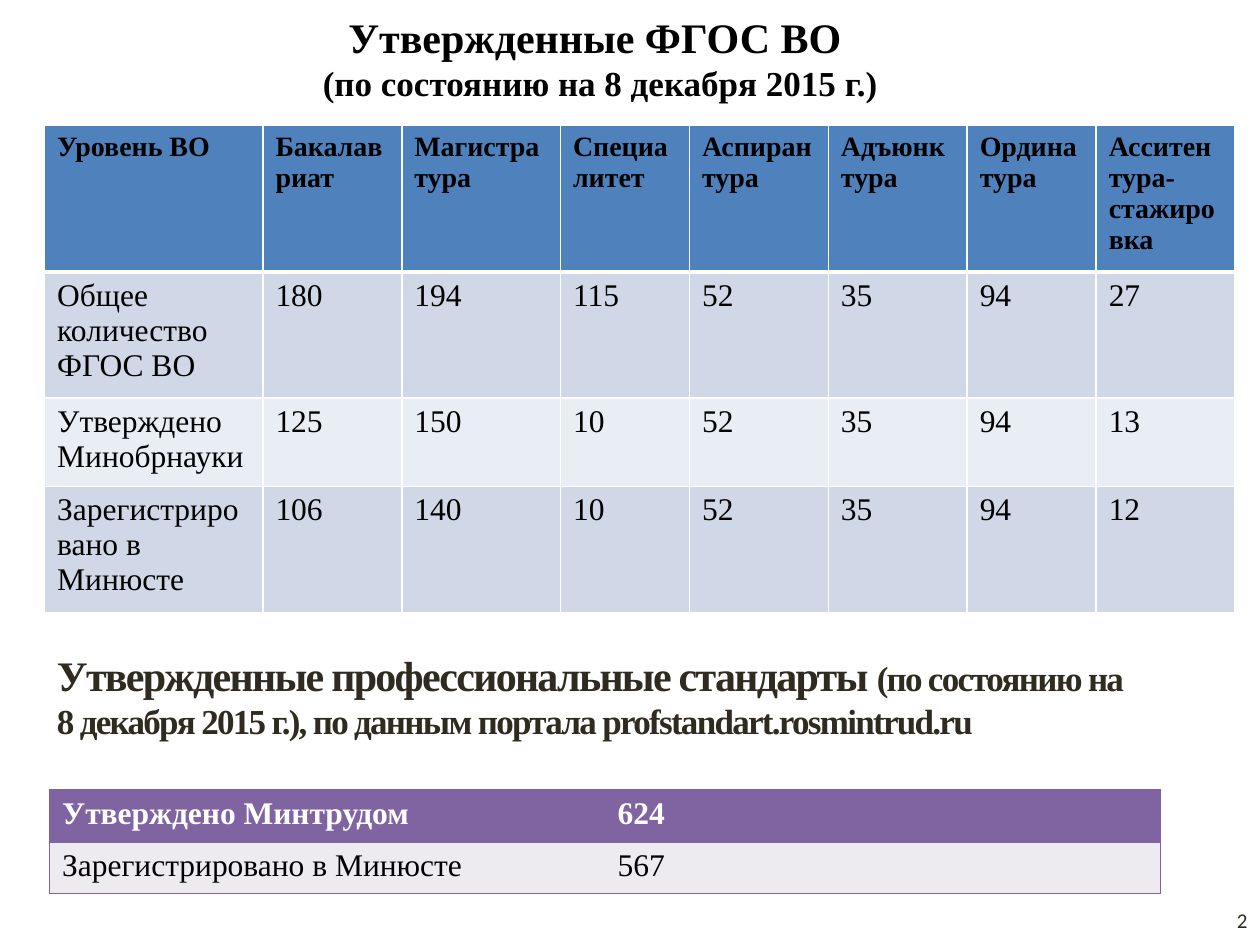
import pptx
import pptx.util
import pptx.dml.color
import pptx.enum.text
import pptx.oxml
import pptx.oxml.ns
from dataclasses import dataclass

Cm = pptx.util.Cm
Pt = pptx.util.Pt
ALIGN = pptx.enum.text.PP_ALIGN
MIDDLE = pptx.enum.text.MSO_ANCHOR.MIDDLE


@dataclass(frozen=True)
class Theme:
    serif: str = "Times New Roman"
    sans: str = "Calibri"
    black: str = "000000"
    white: str = "FFFFFF"
    ink: str = "2F2B20"
    blue: str = "4F81BD"
    blue_bands: tuple = ("D0D8E8", "E9EDF4")
    purple: str = "8064A2"
    purple_bands: tuple = ("EDEAF0",)
    heading: int = 24
    subheading: int = 20
    cell: int = 18
    column_head: int = 16
    page: int = 12


THEME = Theme()

TITLE = ("Утвержденные ФГОС ВО ", "(по состоянию на 8 декабря 2015 г.)")
STANDARDS_HEADING = (
    "Утвержденные профессиональные стандарты ",
    "(по состоянию на 8 декабря 2015 г.), по данным портала profstandart.rosmintrud.ru",
)
PAGE_NUMBER = "2"
LEVELS = [
    ("Уровень ВО", "Бакалавриат", "Магистратура", "Специалитет", "Аспирантура",
     "Адъюнктура", "Ординатура", "Асситентура-стажировка"),
    ("Общее количество ФГОС ВО", 180, 194, 115, 52, 35, 94, 27),
    ("Утверждено Минобрнауки", 125, 150, 10, 52, 35, 94, 13),
    ("Зарегистрировано в Минюсте", 106, 140, 10, 52, 35, 94, 12),
]
LEVEL_WIDTHS = (4.4, 2.8, 3.2, 2.6, 2.8, 2.8, 2.6, 2.8)
STANDARDS = [("Утверждено Минтрудом", 624), ("Зарегистрировано в Минюсте", 567)]
STANDARD_WIDTHS = (11.2, 11.2)


def rgb(value):
    return pptx.dml.color.RGBColor.from_string(value)


def style(font, size, color, bold=False, name=THEME.serif):
    font.name, font.size, font.bold = name, Pt(size), bold
    font.color.rgb = rgb(color)


def place(shape, left, top, width, height):
    shape.left, shape.top, shape.width, shape.height = map(Cm, (left, top, width, height))


def set_borders(cell, borders):
    properties = cell._tc.get_or_add_tcPr()
    for index, side in enumerate("LRTB"):
        color, width = borders[side]
        paint = f'<a:solidFill><a:srgbClr val="{color}"/></a:solidFill>' if color else "<a:noFill/>"
        properties.insert(index, pptx.oxml.parse_xml(
            f'<a:ln{side} {pptx.oxml.ns.nsdecls("a")} w="{Pt(width)}">{paint}</a:ln{side}>'))


def white_grid(row, column, last_row, last_column):
    borders = {side: (THEME.white, 1) for side in "LRTB"}
    if row < 2:
        borders["B" if row == 0 else "T"] = (THEME.white, 3)
    return borders


def purple_frame(row, column, last_row, last_column):
    line, gap = (THEME.purple, 1), (None, 1)
    return {"L": line if column == 0 else gap,
            "R": line if column == last_column else gap,
            "T": line, "B": line}


def add_grid(slide, rows, widths, left, top, height, row_height,
             head_fill, head_color, head_size, bands, borders):
    frame = slide.shapes.add_table(len(rows), len(widths), Cm(left), Cm(top),
                                   Cm(sum(widths)), Cm(height))
    grid = frame.table
    for column, width in zip(grid.columns, widths):
        column.width = Cm(width)
    for r, values in enumerate(rows):
        grid.rows[r].height = Cm(row_height)
        for c, value in enumerate(values):
            cell = grid.cell(r, c)
            cell.text = str(value)
            cell.fill.solid()
            cell.fill.fore_color.rgb = rgb(bands[(r - 1) % len(bands)] if r else head_fill)
            font = cell.text_frame.paragraphs[0].font
            if r == 0:
                style(font, head_size, head_color, True)
            else:
                style(font, THEME.cell, THEME.black)
            set_borders(cell, borders(r, c, len(rows) - 1, len(widths) - 1))
    frame.height = Cm(height)


def add_heading(paragraph, parts, color, break_between=False, spacing=None):
    style(paragraph.font, THEME.heading, color, True)
    for index, (words, size) in enumerate(zip(parts, (THEME.heading, THEME.subheading))):
        if index and break_between:
            paragraph.add_line_break()
        run = paragraph.add_run()
        run.text = words
        style(run.font, size, color, True)
        if spacing is not None:
            run._r.get_or_add_rPr().set("spc", str(spacing))


def add_text_area(slide, left, top, width, height):
    area = slide.shapes.add_textbox(Cm(left), Cm(top), Cm(width), Cm(height)).text_frame
    area.word_wrap = True
    area.vertical_anchor = MIDDLE
    return area.paragraphs[0]


def main():
    deck = pptx.Presentation()
    deck.slide_width, deck.slide_height = Cm(25.4), Cm(19.05)
    slide = deck.slides.add_slide(deck.slide_layouts[5])

    title = slide.shapes.title
    place(title, 0.7, 0, 22.8, 2.33)
    title.text_frame.word_wrap = True
    title.text_frame.vertical_anchor = MIDDLE
    title_line = title.text_frame.paragraphs[0]
    title_line.alignment = ALIGN.CENTER
    add_heading(title_line, TITLE, THEME.black, break_between=True)

    page = add_text_area(slide, 19.48, 18.03, 5.92, 1.02)
    page.text = PAGE_NUMBER
    page.alignment = ALIGN.RIGHT
    style(page.font, THEME.page, THEME.ink, name=THEME.sans)

    add_grid(slide, LEVELS, LEVEL_WIDTHS, 0.9, 2.52, 9.83, 1.03,
             THEME.blue, THEME.black, THEME.column_head, THEME.blue_bands, white_grid)

    standards = add_text_area(slide, 0.9, 12.52, 22, 3)
    standards.alignment = ALIGN.LEFT
    add_heading(standards, STANDARDS_HEADING, THEME.ink, spacing=-100)

    add_grid(slide, STANDARDS, STANDARD_WIDTHS, 1, 15.93, 2.09, 1.04,
             THEME.purple, THEME.white, THEME.cell, THEME.purple_bands, purple_frame)

    deck.save("out.pptx")


if __name__ == "__main__":
    main()
